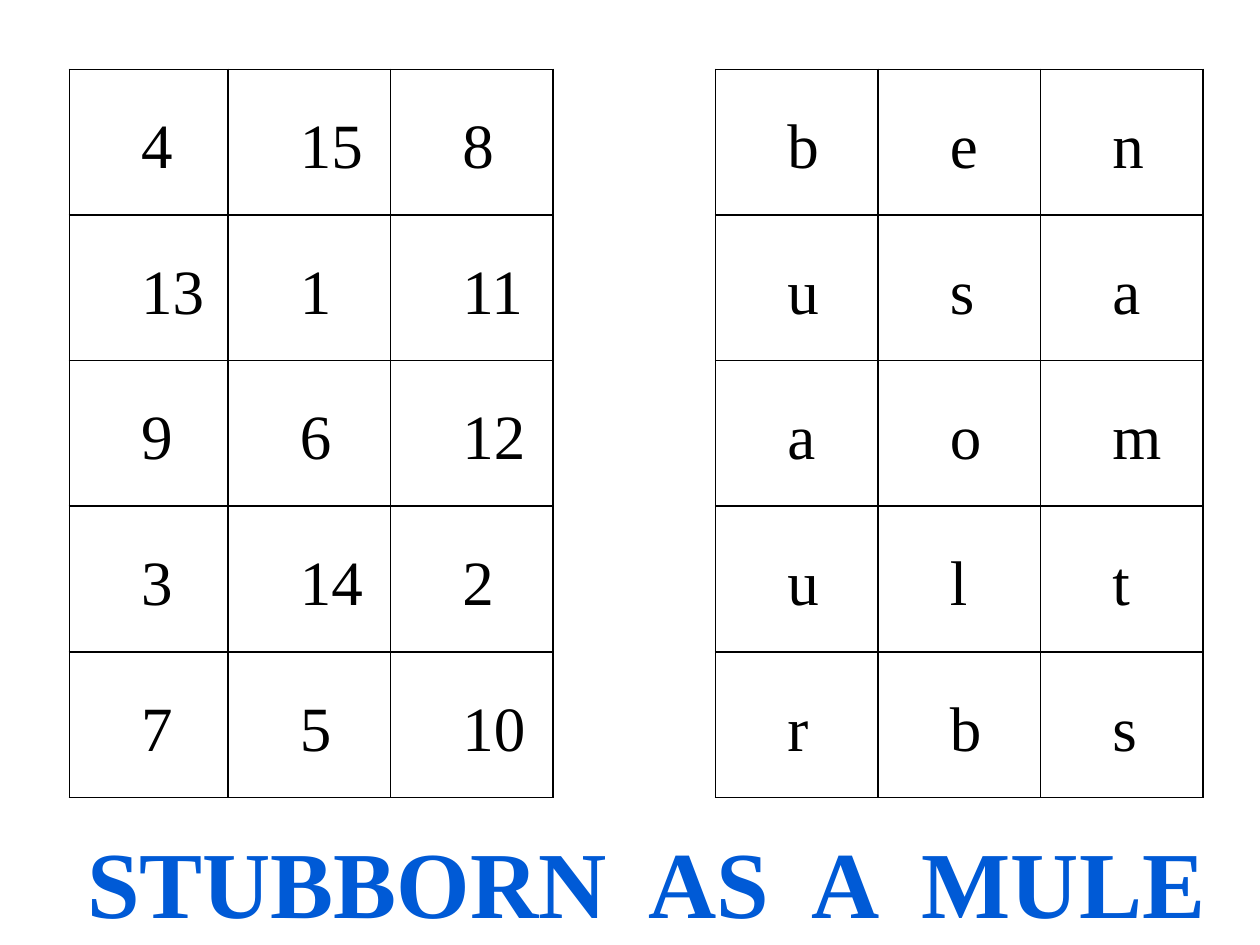
from lxml.etree import SubElement
from pptx import Presentation
from pptx.dml.color import RGBColor
from pptx.enum.text import MSO_ANCHOR, MSO_AUTO_SIZE, PP_ALIGN
from pptx.oxml.ns import qn
from pptx.util import Pt

FONT = "Times New Roman"
BLACK, BLUE = "000000", "005AD6"
LEFT, TOP = 39.6, 39.6
ROW_HEIGHT = 83.23
COL_WIDTHS = [90.72] + [92.88] * 6
GAP_COL = 3
NUMBERS = [
    ["4", "15", "8"],
    ["13", "1", "11"],
    ["9", "6", "12"],
    ["3", "14", "2"],
    ["7", "5", "10"],
]
LETTERS = ["ben", "usa", "aom", "ult", "rbs"]


def rgb(hex_color):
    return RGBColor.from_string(hex_color)


def style_font(font, size, color, bold=False):
    font.name = FONT
    font.size = Pt(size)
    font.bold = bold
    font.color.rgb = rgb(color)


def set_borders(cell, visible):
    """Draw the named sides in black and leave the others without a line."""
    tc_pr = cell._tc.get_or_add_tcPr()
    for side in "LRTB":
        ln = SubElement(tc_pr, qn(f"a:ln{side}"), w=str(Pt(1)))
        if side in visible:
            fill = SubElement(ln, qn("a:solidFill"))
            SubElement(fill, qn("a:srgbClr"), val=BLACK)
        else:
            SubElement(ln, qn("a:noFill"))


def fill_cell(cell, text):
    cell.vertical_anchor = MSO_ANCHOR.MIDDLE
    cell.margin_left = cell.margin_right = Pt(5.04)
    cell.margin_top = cell.margin_bottom = Pt(0)
    p = cell.text_frame.paragraphs[0]
    p.text = text
    p.line_spacing = 1.15
    p._p.get_or_add_pPr().set("marL", str(Pt(36)))
    style_font(p.font, 36, BLACK)


def add_puzzle(s):
    """Number grid and letter grid in one table, parted by an open column."""
    rows = [numbers + [""] + list(letters)
            for numbers, letters in zip(NUMBERS, LETTERS)]
    table = s.shapes.add_table(
        len(rows), len(COL_WIDTHS), Pt(LEFT), Pt(TOP),
        Pt(sum(COL_WIDTHS)), Pt(ROW_HEIGHT * len(rows))).table
    table.first_row = table.horz_banding = False
    for col, width in zip(table.columns, COL_WIDTHS):
        col.width = Pt(width)
    for i, row in enumerate(rows):
        table.rows[i].height = Pt(ROW_HEIGHT)
        for j, text in enumerate(row):
            cell = table.cell(i, j)
            set_borders(cell, "LR" if j == GAP_COL else "LRTB")
            cell.fill.background()
            if text:
                fill_cell(cell, text)


def set_title(s, text):
    sp = s.shapes.title
    sp.left, sp.top, sp.width, sp.height = Pt(39.6), Pt(467.3), Pt(659.5), Pt(72.7)
    tf = sp.text_frame
    tf.word_wrap = False
    tf.auto_size = MSO_AUTO_SIZE.SHAPE_TO_FIT_TEXT
    tf.vertical_anchor = MSO_ANCHOR.TOP
    p = tf.paragraphs[0]
    p.text = text
    p.alignment = PP_ALIGN.CENTER
    style_font(p.font, 54, BLUE, bold=True)


def main():
    prs = Presentation()
    prs.slide_width, prs.slide_height = Pt(720), Pt(540)
    s = prs.slides.add_slide(prs.slide_layouts.get_by_name("Title Only"))
    add_puzzle(s)
    set_title(s, "STUBBORN  AS  A  MULE")
    prs.save("out.pptx")


if __name__ == "__main__":
    main()
